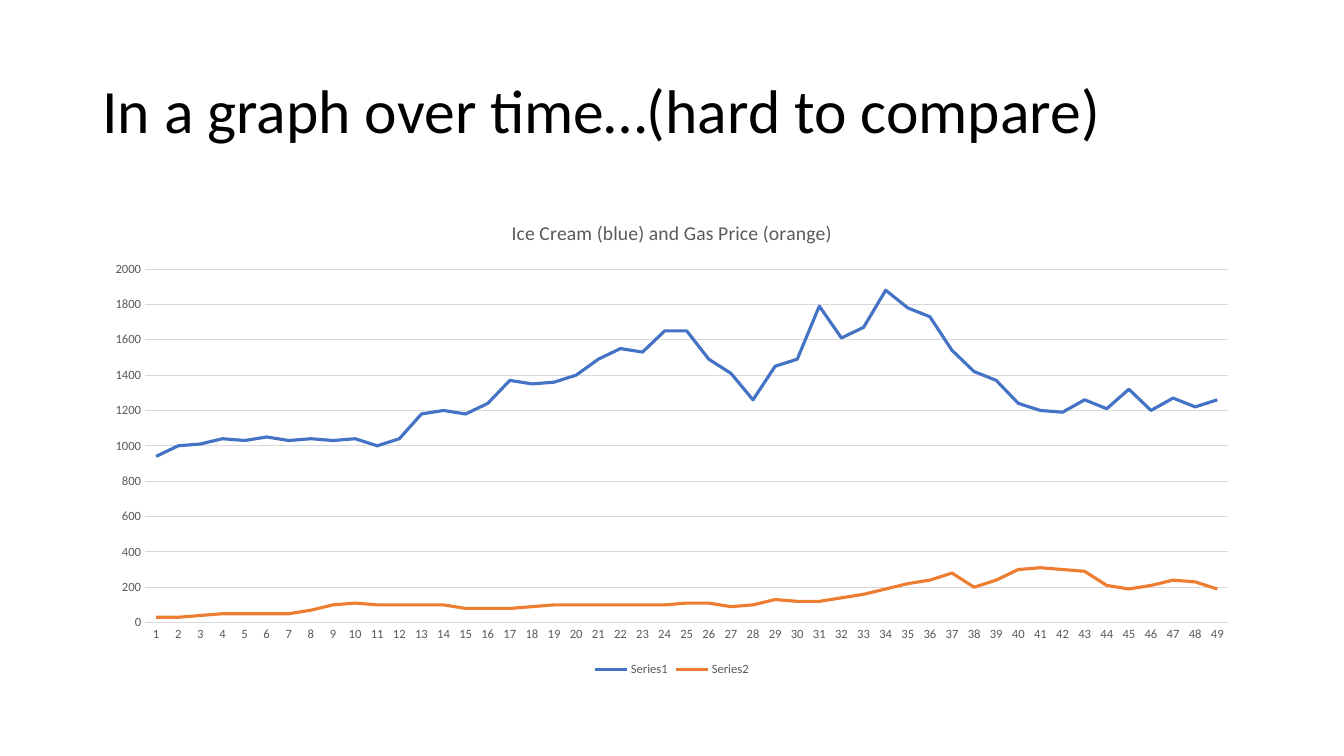
from pptx import Presentation
from pptx.chart.data import CategoryChartData
from pptx.dml.color import RGBColor
from pptx.enum.chart import XL_CHART_TYPE, XL_LEGEND_POSITION, XL_MARKER_STYLE, XL_TICK_MARK
from pptx.enum.text import MSO_ANCHOR, PP_ALIGN
from pptx.util import Pt

BLACK = RGBColor(0x00, 0x00, 0x00)
GREY = RGBColor(0x59, 0x59, 0x59)
LIGHT_GREY = RGBColor(0xD9, 0xD9, 0xD9)
BLUE = RGBColor(0x44, 0x72, 0xC4)
ORANGE = RGBColor(0xED, 0x7D, 0x31)
FONT = "Calibri"

ICE_CREAM = [
    940, 1000, 1010, 1040, 1030, 1050, 1030, 1040, 1030, 1040,
    1000, 1040, 1180, 1200, 1180, 1240, 1370, 1350, 1360, 1400,
    1490, 1550, 1530, 1650, 1650, 1490, 1410, 1260, 1450, 1490,
    1790, 1610, 1670, 1880, 1780, 1730, 1540, 1420, 1370, 1240,
    1200, 1190, 1260, 1210, 1320, 1200, 1270, 1220, 1260,
]
GAS_PRICE = [
    30, 30, 40, 50, 50, 50, 50, 70, 100, 110,
    100, 100, 100, 100, 80, 80, 80, 90, 100, 100,
    100, 100, 100, 100, 110, 110, 90, 100, 130, 120,
    120, 140, 160, 190, 220, 240, 280, 200, 240, 300,
    310, 300, 290, 210, 190, 210, 240, 230, 190,
]


def style_font(font, size, color):
    font.name = FONT
    font.size = Pt(size)
    font.bold = False
    font.color.rgb = color


def style_line(line, width, color):
    line.width = Pt(width)
    line.color.rgb = color


# Page
deck = Presentation()
deck.slide_width, deck.slide_height = Pt(960), Pt(540)
page = deck.slides.add_slide(deck.slide_layouts[5])

# Title
title = page.shapes.title
title.left, title.top, title.width, title.height = Pt(66), Pt(28.75), Pt(828), Pt(104.4)
title.text_frame.vertical_anchor = MSO_ANCHOR.MIDDLE
title.text_frame.word_wrap = True
para = title.text_frame.paragraphs[0]
para.alignment = PP_ALIGN.LEFT
para.line_spacing = 0.9
span = para.add_run()
span.text = "In a graph over time…(hard to compare)"
style_font(span.font, 44, BLACK)

# Line chart
data = CategoryChartData()
data.categories = [str(number) for number in range(1, len(ICE_CREAM) + 1)]
data.add_series("Series1", ICE_CREAM)
data.add_series("Series2", GAS_PRICE)
chart = page.shapes.add_chart(
    XL_CHART_TYPE.LINE, Pt(66), Pt(143.75), Pt(828), Pt(342.6), data
).chart
style_font(chart.font, 10, BLACK)

for series, color in zip(chart.plots[0].series, (BLUE, ORANGE)):
    series.smooth = False
    series.marker.style = XL_MARKER_STYLE.NONE
    style_line(series.format.line, 2.25, color)

# Chart title
chart.has_title = True
chart.chart_title.include_in_layout = False
span = chart.chart_title.text_frame.paragraphs[0].add_run()
span.text = "Ice Cream (blue) and Gas Price (orange)"
style_font(span.font, 14, GREY)

# Axes
for axis in (chart.category_axis, chart.value_axis):
    axis.major_tick_mark = XL_TICK_MARK.NONE
    axis.minor_tick_mark = XL_TICK_MARK.NONE
    style_font(axis.tick_labels.font, 9, GREY)
style_line(chart.category_axis.format.line, 0.75, LIGHT_GREY)

value_axis = chart.value_axis
value_axis.minimum_scale, value_axis.maximum_scale = 0, 2000
value_axis.major_unit = 200
value_axis.format.line.fill.background()
value_axis.has_major_gridlines = True
style_line(value_axis.major_gridlines.format.line, 0.75, LIGHT_GREY)

# Legend
chart.has_legend = True
chart.legend.position = XL_LEGEND_POSITION.BOTTOM
chart.legend.include_in_layout = False
style_font(chart.legend.font, 9, GREY)

deck.save("out.pptx")
